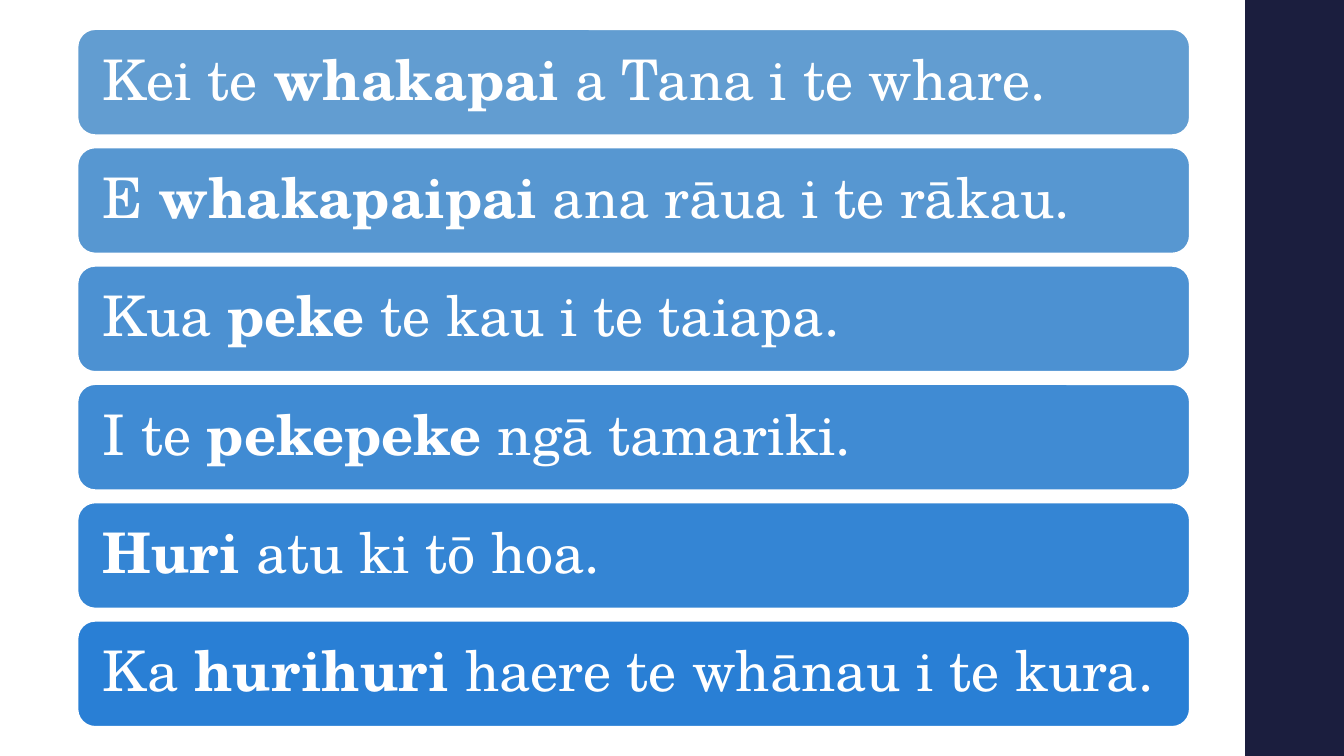
from dataclasses import dataclass

from pptx import Presentation
from pptx.dml.color import RGBColor
from pptx.enum.shapes import MSO_SHAPE
from pptx.enum.text import MSO_ANCHOR, PP_ALIGN
from pptx.util import Pt

PX = 9144  # 100 px to the inch
RECTANGLE = MSO_SHAPE.RECTANGLE
ROUNDED = MSO_SHAPE.ROUNDED_RECTANGLE
MIDDLE = MSO_ANCHOR.MIDDLE
LEFT = PP_ALIGN.LEFT


@dataclass(frozen=True)
class Theme:
    font: str = "TeX Gyre Schola"
    size: int = 40
    outline: float = 1.1
    white: str = "FFFFFF"
    navy: str = "1B1E3E"
    blues: tuple = ("629DD1", "5797D1", "4C91D2", "408BD3", "3485D4", "297FD5")


THEME = Theme()

# Each sentence: before the verb, the verb in bold, after the verb
SENTENCES = [
    ("Kei te ", "whakapai", " a Tana i te whare."),
    ("E ", "whakapaipai", " ana rāua i te rākau."),
    ("Kua ", "peke ", "te kau i te taiapa."),
    ("I te ", "pekepeke ", "ngā tamariki."),
    ("", "Huri ", "atu ki tō hoa."),
    ("Ka ", "hurihuri ", "haere te whānau i te kura."),
]


def color(value):
    return RGBColor.from_string(value)


def add_block(page, kind, box, fill):
    block = page.shapes.add_shape(kind, *(round(length * PX) for length in box))
    block.shadow.inherit = False
    block.fill.solid()
    block.fill.fore_color.rgb = color(fill)
    block.line.fill.background()
    return block


def add_side_band(page, box):
    add_block(page, RECTANGLE, box, THEME.navy)


def add_sentence_bar(page, box, fill, sentence):
    bar = add_block(page, ROUNDED, box, fill)
    bar.line.color.rgb = color(THEME.white)
    bar.line.width = Pt(THEME.outline)

    frame = bar.text_frame
    frame.word_wrap = True
    frame.vertical_anchor = MIDDLE
    frame.margin_left = frame.margin_right = 20 * PX
    frame.margin_top = frame.margin_bottom = 0

    para = frame.paragraphs[0]
    para.alignment = LEFT
    para.line_spacing = 0.9
    para.font.name = THEME.font
    para.font.size = Pt(THEME.size)
    para.font.color.rgb = color(THEME.white)
    before, verb, after = sentence
    for words, bold in ((before, False), (verb, True), (after, False)):
        if words:
            span = para.add_run()
            span.text = words
            span.font.bold = bold


def add_sentence_list(page, box, bar_height):
    left, top, width, height = box
    pitch = (height - bar_height) / (len(SENTENCES) - 1)
    for row, (fill, sentence) in enumerate(zip(THEME.blues, SENTENCES)):
        bar_box = (left, top + row * pitch, width, bar_height)
        add_sentence_bar(page, bar_box, fill, sentence)


def main():
    deck = Presentation()
    deck.slide_width = 1333 * PX
    deck.slide_height = 750 * PX
    page = deck.slides.add_slide(deck.slide_layouts[6])

    # Dark band down the right edge
    add_side_band(page, (1235, 0, 98, 750))
    # Six sentences in evenly spaced bars
    add_sentence_list(page, (77, 29, 1103, 692), bar_height=105)

    deck.save("out.pptx")


if __name__ == "__main__":
    main()
